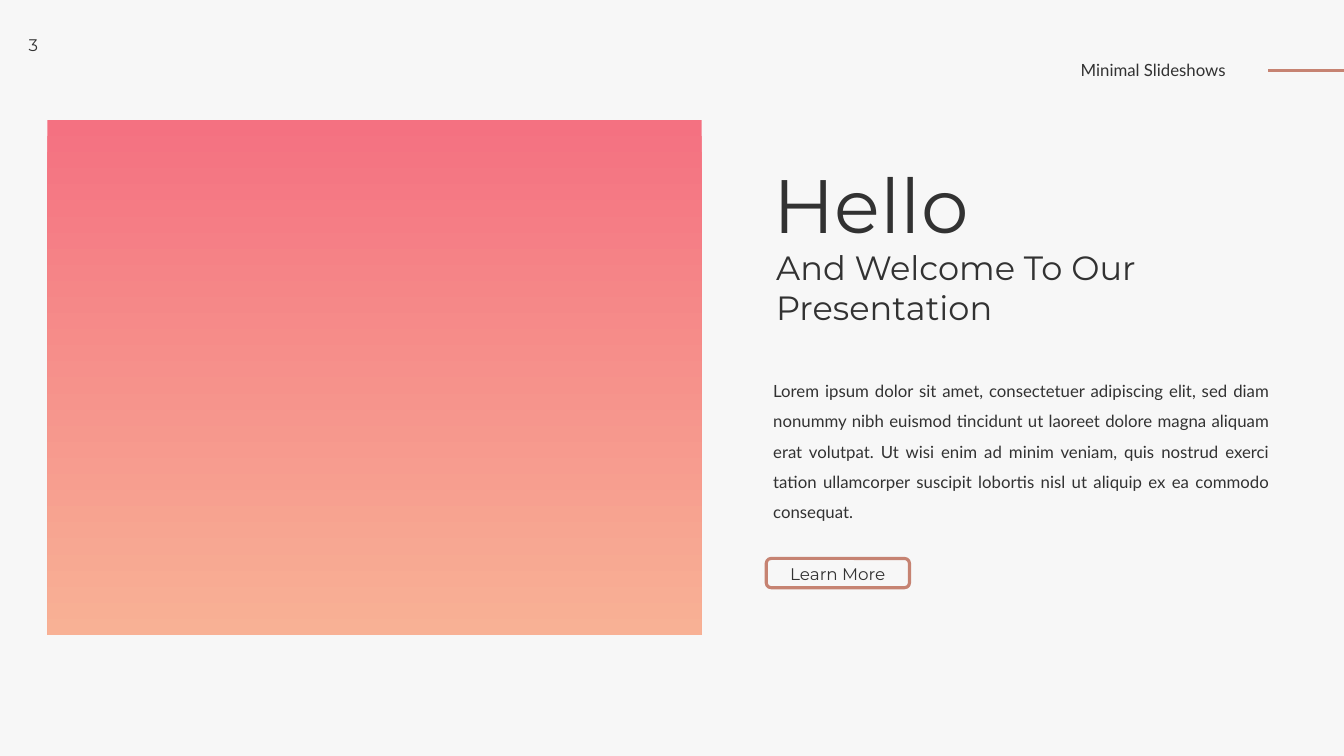
import dataclasses
import typing

import lxml.etree
import pptx
import pptx.dml.color
import pptx.enum.shapes
import pptx.enum.text
import pptx.oxml.ns
import pptx.util

Inches = pptx.util.Inches
Align = pptx.enum.text.PP_ALIGN
Preset = pptx.enum.shapes.MSO_SHAPE

COLORS = {
    "background": "F7F7F7",
    "text": "323232",
    "accent": "C68372",
    "gradient_top": "F47181",
    "gradient_bottom": "F8B195",
}
HEADING_FONT = "Montserrat"
BODY_FONT = "Lato"
ACCENT_WIDTH = pptx.util.Pt(2.25)


@dataclasses.dataclass(frozen=True)
class Caption:
    text: str
    left: float
    top: float
    width: float
    height: float
    font: str = HEADING_FONT
    size: int = 12
    align: Align = Align.LEFT
    line_spacing: float = 1.0
    inset_y: float = 0.05


PAGE_NUMBER = Caption("3", 0.02, 0.34, 0.62, 0.2, align=Align.CENTER, inset_y=0)
DECK_NAME = Caption("Minimal Slideshows", 10.62, 0.54, 1.98, 0.3, BODY_FONT)
GREETING = Caption("Hello", 7.57, 1.52, 4.43, 1.01, size=54)
WELCOME = Caption("And Welcome To Our Presentation", 7.6, 2.4, 4.43, 0.91, size=24)
INTRO = Caption(
    "Lorem ipsum dolor sit amet, consectetuer adipiscing elit, sed diam "
    "nonummy nibh euismod tincidunt ut laoreet dolore magna aliquam erat "
    "volutpat. Ut wisi enim ad minim veniam, quis nostrud exerci tation "
    "ullamcorper suscipit lobortis nisl ut aliquip ex ea commodo consequat.",
    7.57, 3.63, 5.12, 1.58, BODY_FONT, align=Align.JUSTIFY, line_spacing=1.5,
)
BUTTON_LABEL = Caption("Learn More", 7.68, 5.54, 1.26, 0.3, align=Align.CENTER)


def rgb(name: str) -> pptx.dml.color.RGBColor:
    return pptx.dml.color.RGBColor.from_string(COLORS[name])


def write_caption(holder: typing.Any, caption: Caption) -> None:
    """Place a text holder and fill it with one formatted run."""
    holder.left, holder.top = Inches(caption.left), Inches(caption.top)
    holder.width, holder.height = Inches(caption.width), Inches(caption.height)
    frame = holder.text_frame
    frame.word_wrap = True
    frame.auto_size = pptx.enum.text.MSO_AUTO_SIZE.NONE
    frame.vertical_anchor = pptx.enum.text.MSO_ANCHOR.TOP
    frame.margin_left = frame.margin_right = Inches(0.1)
    frame.margin_top = frame.margin_bottom = Inches(caption.inset_y)
    paragraph = frame.paragraphs[0]
    paragraph.alignment = caption.align
    paragraph.line_spacing = caption.line_spacing
    run = paragraph.add_run()
    run.text = caption.text
    run.font.name = caption.font
    run.font.size = pptx.util.Pt(caption.size)
    run.font.color.rgb = rgb("text")


def add_caption(shapes: typing.Any, caption: Caption) -> None:
    write_caption(shapes.add_textbox(0, 0, 0, 0), caption)


def add_header_line(shapes: typing.Any) -> None:
    header_line = shapes.add_connector(
        pptx.enum.shapes.MSO_CONNECTOR.STRAIGHT,
        Inches(13.33), Inches(0.7), Inches(12.58), Inches(0.7),
    )
    header_line.line.color.rgb = rgb("accent")
    header_line.line.width = ACCENT_WIDTH
    properties = header_line._element.spPr
    lxml.etree.SubElement(properties, pptx.oxml.ns.qn("a:effectLst"))


def add_gradient_panel(shapes: typing.Any) -> None:
    panel = shapes.add_shape(
        Preset.RECTANGLE, Inches(0.47), Inches(1.19), Inches(6.49), Inches(5.11)
    )
    panel.shadow.inherit = False
    panel.line.fill.background()
    panel.fill.gradient()
    panel.fill.gradient_angle = 270
    for stop, name in zip(panel.fill.gradient_stops, ("gradient_top", "gradient_bottom")):
        stop.color.rgb = rgb(name)


def add_button(shapes: typing.Any) -> None:
    button = shapes.add_group_shape()
    outline = button.shapes.add_shape(
        Preset.ROUNDED_RECTANGLE, Inches(7.6), Inches(5.54), Inches(1.42), Inches(0.29)
    )
    outline.shadow.inherit = False
    outline.fill.background()
    outline.line.color.rgb = rgb("accent")
    outline.line.width = ACCENT_WIDTH
    add_caption(button.shapes, BUTTON_LABEL)
    # Fit the group around its placed members
    button.left, button.top = outline.left, outline.top
    button.width, button.height = outline.width, Inches(BUTTON_LABEL.height)
    frame = button._element.grpSpPr.get_or_add_xfrm()
    frame.chOff.x, frame.chOff.y = button.left, button.top
    frame.chExt.cx, frame.chExt.cy = button.width, button.height


def main() -> None:
    deck = pptx.Presentation()
    deck.slide_width, deck.slide_height = Inches(13.33), Inches(7.5)
    slide = deck.slides.add_slide(deck.slide_layouts.get_by_name("Title Only"))
    slide.background.fill.solid()
    slide.background.fill.fore_color.rgb = rgb("background")

    # Header
    add_caption(slide.shapes, PAGE_NUMBER)
    add_caption(slide.shapes, DECK_NAME)
    add_header_line(slide.shapes)

    # Left panel
    add_gradient_panel(slide.shapes)

    # Greeting and introduction
    write_caption(slide.shapes.title, GREETING)
    add_caption(slide.shapes, WELCOME)
    add_caption(slide.shapes, INTRO)
    add_button(slide.shapes)

    deck.save("out.pptx")


if __name__ == "__main__":
    main()
